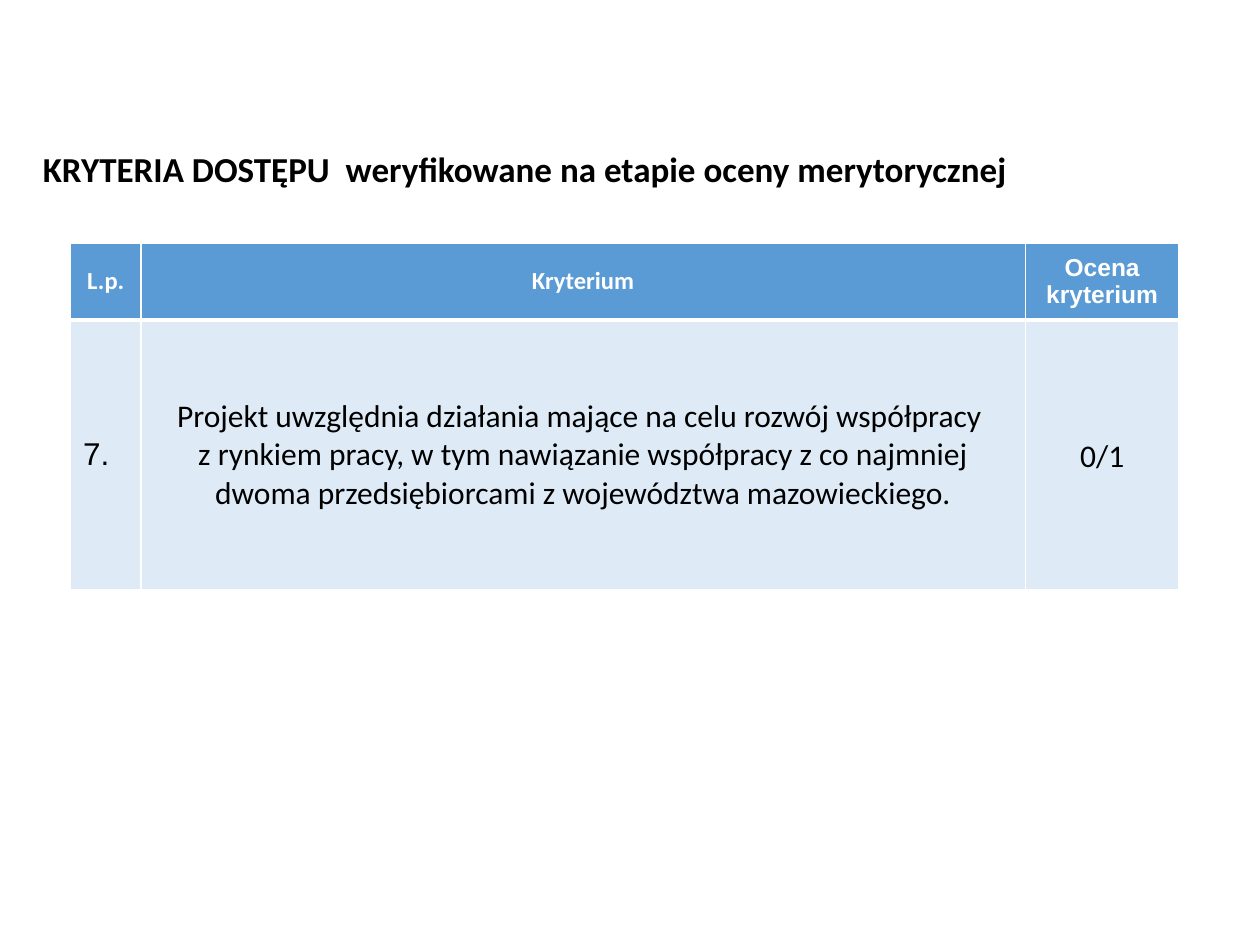
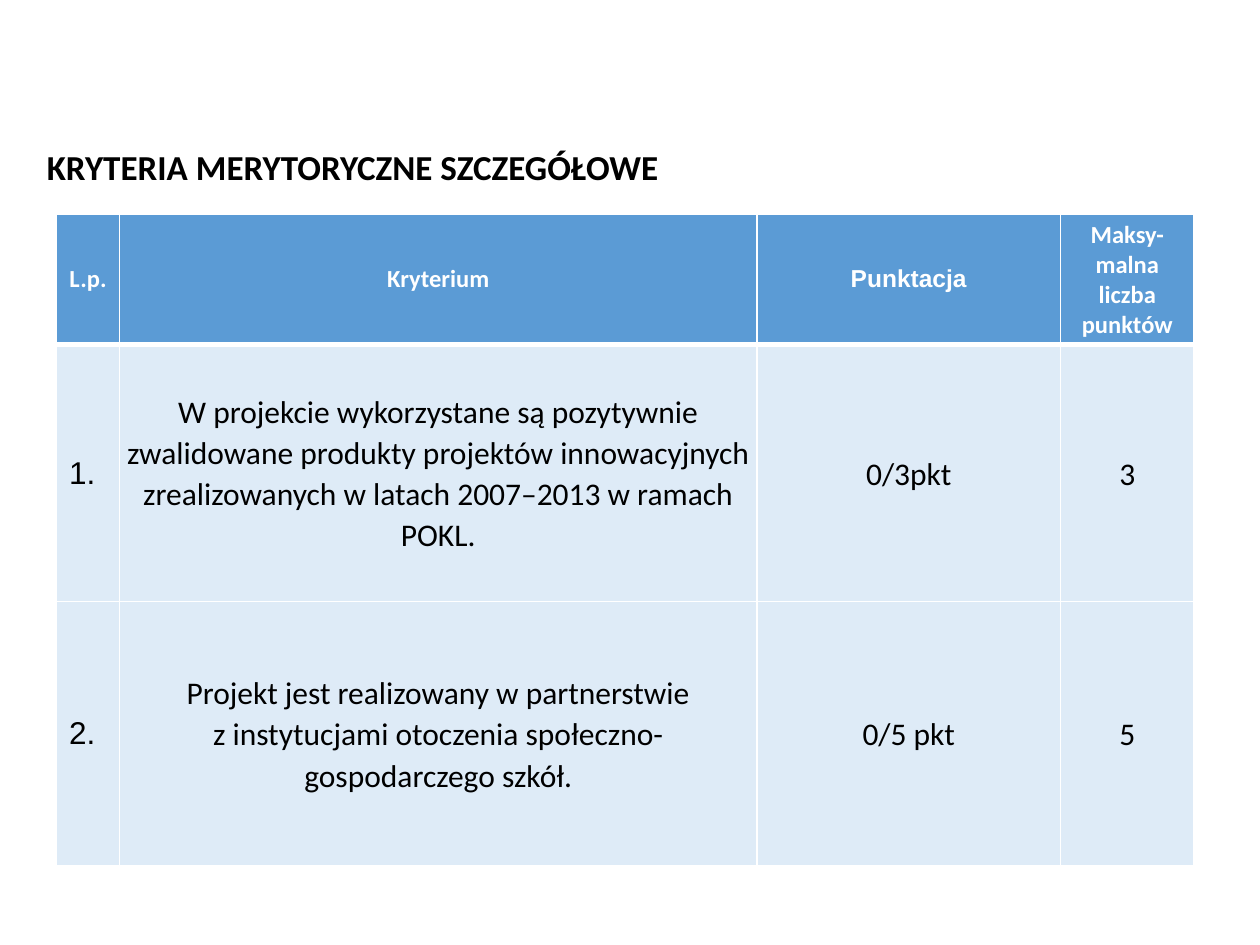
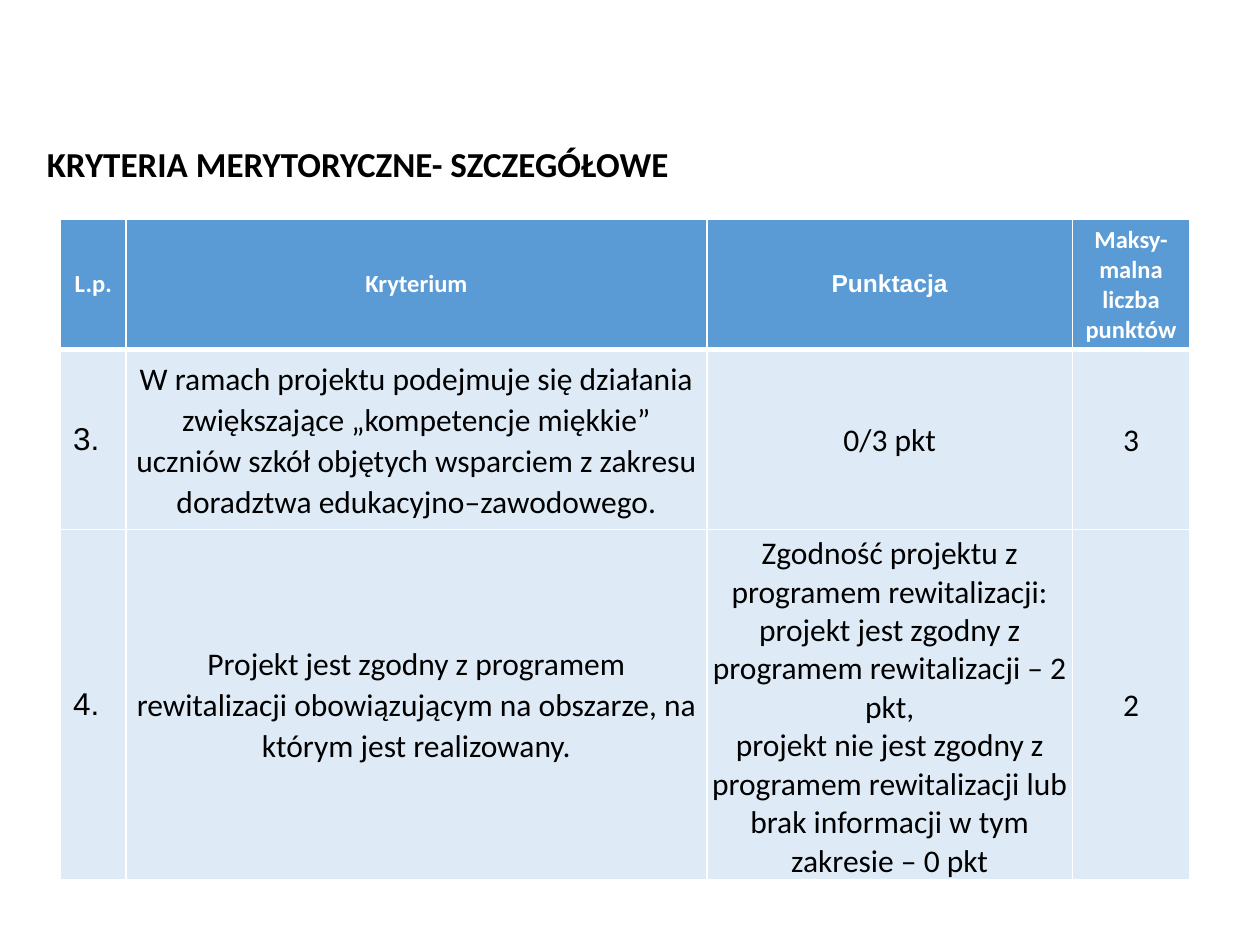
"""Build three slides with tables of project assessment criteria."""
import pptx
import pptx.dml.color
import pptx.enum.text
import pptx.oxml
import pptx.oxml.ns
import pptx.util

Cm = pptx.util.Cm
Pt = pptx.util.Pt
ALIGN = pptx.enum.text.PP_ALIGN
MIDDLE = pptx.enum.text.MSO_ANCHOR.MIDDLE
TITLE_ONLY = 5


class CriteriaDeck:
    """Hold the shared style and the current slide."""

    colours = {"header": "5B9BD5", "body": "DEEBF7", "line": "FFFFFF",
               "light": "FFFFFF", "dark": "000000"}
    main_font, other_font = "Calibri", "Arial"
    thin, thick = Pt(1), Pt(3)
    snug_margin = Cm(0.1)

    def __init__(self):
        self.deck = pptx.Presentation()
        self.deck.slide_width, self.deck.slide_height = Cm(25.4), Cm(19.05)
        self.page = None

    def add_page(self):
        self.page = self.deck.slides.add_slide(self.deck.slide_layouts[TITLE_ONLY])

    def colour(self, name):
        return pptx.dml.color.RGBColor.from_string(self.colours[name])

    def format_text(self, frame, size, font, colour, bold, align, spacing=1.0):
        for para in frame.paragraphs:
            para.alignment = align
            para.line_spacing = spacing
            for span in para.runs:
                span.font.size = Pt(size)
                span.font.name = font
                span.font.bold = bold
                span.font.color.rgb = self.colour(colour)

    def title(self, text, left, top, width, wrap=False):
        box = self.page.shapes.title
        box.left, box.top, box.width, box.height = Cm(left), Cm(top), Cm(width), Cm(1.12)
        frame = box.text_frame
        frame.text = text
        frame.word_wrap = wrap
        frame.auto_size = pptx.enum.text.MSO_AUTO_SIZE.SHAPE_TO_FIT_TEXT
        frame.vertical_anchor = MIDDLE
        self.format_text(frame, 20, self.main_font, "dark", True, ALIGN.LEFT)

    def borders(self, cell, row):
        """Draw white borders, heavier between the header and the body."""
        widths = {"L": self.thin, "R": self.thin,
                  "T": self.thick if row == 1 else self.thin,
                  "B": self.thick if row == 0 else self.thin}
        properties = cell._tc.get_or_add_tcPr()
        for side, width in widths.items():
            properties.append(pptx.oxml.parse_xml(
                f'<a:ln{side} {pptx.oxml.ns.nsdecls("a")} w="{width}"><a:solidFill>'
                f'<a:srgbClr val="{self.colours["line"]}"/></a:solidFill></a:ln{side}>'))

    def cell(self, cell, text, row, column, snug):
        header = row == 0
        self.borders(cell, row)
        cell.fill.solid()
        cell.fill.fore_color.rgb = self.colour("header" if header else "body")
        cell.vertical_anchor = MIDDLE
        cell.text_frame.text = text
        if snug:
            cell.margin_left = cell.margin_right = self.snug_margin
            cell.margin_top = cell.margin_bottom = self.snug_margin
        font = self.other_font if column == (2 if header else 0) else self.main_font
        align = ALIGN.LEFT if column == 0 and not header else ALIGN.CENTER
        single = len(cell.text_frame.paragraphs) == 1
        self.format_text(cell.text_frame, 14 if header else 18, font,
                         "light" if header else "dark", header, align,
                         1.07 if snug and single else 1.0)

    def table(self, left, top, widths, heights, rows, first_snug=1):
        """Add a table whose body cells are snug from column first_snug on."""
        frame = self.page.shapes.add_table(
            len(rows), len(widths), Cm(left), Cm(top), Cm(sum(widths)), Cm(sum(heights)))
        table = frame.table
        table.horz_banding = False
        for column, width in zip(table.columns, widths):
            column.width = Cm(width)
        for row, height in zip(table.rows, heights):
            row.height = Cm(height)
        for row, texts in enumerate(rows):
            for column, text in enumerate(texts):
                snug = row > 0 and column >= first_snug
                self.cell(table.cell(row, column), text, row, column, snug)


def main():
    """Build and save the deck."""
    criteria = CriteriaDeck()
    points_header = ["L.p.", "Kryterium", "Punktacja", "Maksy-malna liczba punktów"]

    criteria.add_page()
    criteria.title("KRYTERIA DOSTĘPU  weryfikowane na etapie oceny merytorycznej",
                   0.61, 2.84, 23.14, wrap=True)
    criteria.table(1.42, 4.9, [1.42, 17.83, 3.1], [1.55, 5.44], [
        ["L.p.", "Kryterium", "Ocena kryterium"],
        ["7.", "Projekt uwzględnia działania mające na celu rozwój współpracy \v"
               "z rynkiem pracy, w tym nawiązanie współpracy z co najmniej "
               "dwoma przedsiębiorcami z województwa mazowieckiego.", "0/1"],
    ], first_snug=2)

    criteria.add_page()
    criteria.title("KRYTERIA MERYTORYCZNE SZCZEGÓŁOWE", 0.69, 2.79, 13.16)
    criteria.table(1.14, 4.32, [1.27, 12.85, 6.12, 2.69], [2.57, 5.18, 5.33], [
        points_header,
        ["1.", "W projekcie wykorzystane są pozytywnie zwalidowane produkty projektów "
               "innowacyjnych zrealizowanych w latach 2007–2013 w ramach POKL.",
         "0/3pkt", "3"],
        ["2.", "Projekt jest realizowany w partnerstwie\v"
               "z instytucjami otoczenia społeczno-gospodarczego szkół.",
         "0/5 pkt", "5"],
    ])

    criteria.add_page()
    criteria.title("KRYTERIA MERYTORYCZNE- SZCZEGÓŁOWE", 0.69, 2.74, 13.16)
    criteria.table(1.22, 4.42, [1.32, 11.71, 7.37, 2.36], [2.51, 3.63, 6.86], [
        points_header,
        ["3.", "W ramach projektu podejmuje się działania zwiększające "
               "„kompetencje miękkie” uczniów szkół objętych wsparciem z zakresu "
               "doradztwa edukacyjno–zawodowego.", "0/3 pkt", "3"],
        ["4.", "Projekt jest zgodny z programem rewitalizacji obowiązującym "
               "na obszarze, na którym jest realizowany.",
         "Zgodność projektu z programem rewitalizacji:\n"
         "projekt jest zgodny z programem rewitalizacji – 2 pkt,\n"
         "projekt nie jest zgodny z programem rewitalizacji lub "
         "brak informacji w tym zakresie – 0 pkt", "2"],
    ])

    criteria.deck.save("out.pptx")


if __name__ == "__main__":
    main()
